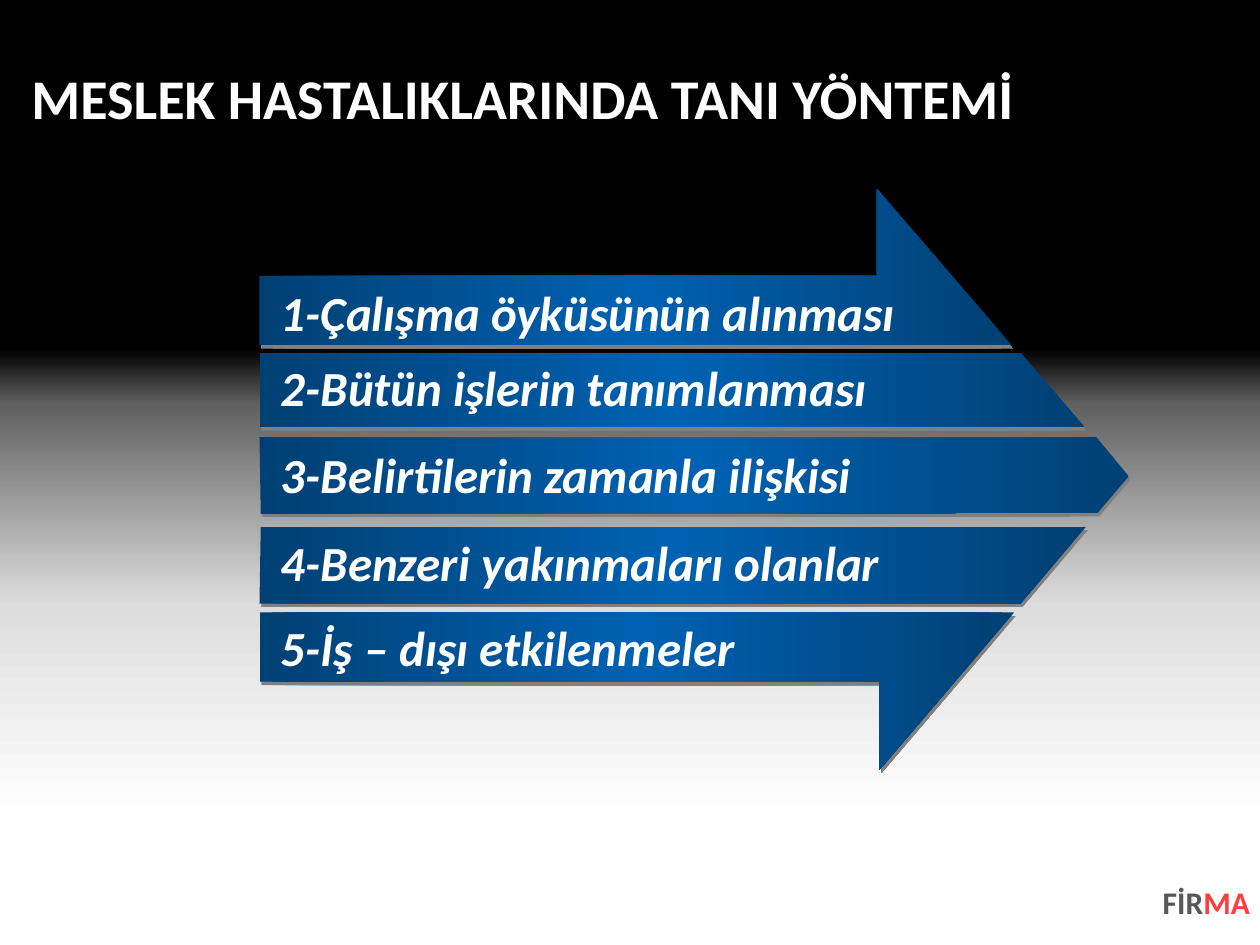
from lxml.etree import SubElement
from pptx import Presentation
from pptx.dml.color import RGBColor
from pptx.enum.shapes import MSO_SHAPE
from pptx.enum.text import MSO_ANCHOR, MSO_AUTO_SIZE, PP_ALIGN
from pptx.oxml.ns import qn
from pptx.util import Emu, Pt

PX = 9144  # 100 px to the inch
FONT = "Calibri"
HUES = {
    "black": "000000", "white": "FFFFFF", "dark": "5F5F5F", "light": "DDDDDD",
    "navy": "004074", "blue": "0061B2", "shade": "808080",
    "gray": "575757", "red": "FB3E3E",
}

# Label, label top, then outline, all relative to the arrow's box
STEPS = [
    ("1-Çalışma öyküsünün alınması", 74,
     [(597, 124), (490, 0), (490, 69), (0, 69), (0, 124)]),
    ("2-Bütün işlerin tanımlanması", 134,
     [(0, 189), (655, 189), (604, 130), (0, 130)]),
    ("3-Belirtilerin zamanla ilişkisi", 203,
     [(1, 258), (665, 257), (690, 228), (664, 197), (0, 197)]),
    ("4-Benzeri yakınmaları olanlar", 273,
     [(0, 329), (604, 329), (656, 268), (1, 268)]),
    ("5-İş – dışı etkilenmeler", 340,
     [(0, 391), (492, 391), (492, 461), (599, 336), (0, 336)]),
]


def px(*nums):
    return [Emu(n * PX) for n in nums]


def rgb(name):
    return RGBColor.from_string(HUES[name])


def blend(shape, names, angle):
    """Fill with evenly spaced colour stops; the angle runs clockwise."""
    shape.fill.gradient()
    grad = shape.fill._xPr.find(qn("a:gradFill"))
    for child in list(grad):
        grad.remove(child)
    stops = SubElement(grad, qn("a:gsLst"))
    for i, name in enumerate(names):
        pos = 100000 * i // (len(names) - 1)
        stop = SubElement(stops, qn("a:gs"), pos=str(pos))
        SubElement(stop, qn("a:srgbClr"), val=HUES[name])
    SubElement(grad, qn("a:lin"), ang=str(angle * 60000), scaled="0")


def shade(shape):
    """Cast a short hard shadow to the lower right."""
    shape.shadow.inherit = False
    effect = shape._element.spPr.find(qn("a:effectLst"))
    cast = SubElement(effect, qn("a:outerShdw"), blurRad="0",
                      dist=str(Pt(2.2)), dir=str(63 * 60000),
                      algn="ctr", rotWithShape="0")
    SubElement(cast, qn("a:srgbClr"), val=HUES["shade"])


def write(shapes, box, runs, size, pad=0):
    """Add a bold text box from (text, colour) runs; return frame and paragraph."""
    label = shapes.add_textbox(*px(*box))
    frame = label.text_frame
    frame.word_wrap = True
    frame.margin_left = frame.margin_right = 0
    frame.margin_top = frame.margin_bottom = Emu(pad * PX)
    para = frame.paragraphs[0]
    para.font.name, para.font.size, para.font.bold = FONT, Pt(size), True
    for text, hue in runs:
        run = para.add_run()
        run.text = text
        run.font.color.rgb = rgb(hue)
    return frame, para


def backdrop(slide, x, y, w):
    shapes = slide.shapes.add_group_shape().shapes
    bands = [
        (0, 288, ["black"]),
        (320, 161, ["dark", "light"]),
        (278, 43, ["black", "dark"]),
        (479, 171, ["light", "white"]),
    ]
    for top, high, names in bands:
        band = shapes.add_shape(MSO_SHAPE.RECTANGLE, *px(x, y + top, w, high))
        if len(names) > 1:
            blend(band, names, 90)
        else:
            band.fill.solid()
            band.fill.fore_color.rgb = rgb(names[0])
        band.line.fill.background()
        band.shadow.inherit = False


def arrow(slide, x, y):
    for _, _, points in STEPS:
        first, *rest = [(x + a, y + b) for a, b in points]
        pen = slide.shapes.build_freeform(*first, scale=PX)
        pen.add_line_segments(rest, close=True)
        slab = pen.convert_to_shape()
        blend(slab, ["navy", "blue", "navy"], 0)
        slab.line.fill.background()
        shade(slab)

    labels = slide.shapes.add_group_shape().shapes
    for text, top, _ in STEPS:
        frame, para = write(labels, (x + 17, y + top, 580, 47),
                            [(text, "white")], 28)
        frame.auto_size = MSO_AUTO_SIZE.SHAPE_TO_FIT_TEXT
        para.font.italic = True


def title(slide, box):
    frame, para = write(slide.shapes, box,
                        [("MESLEK HASTALIKLARINDA TANI YÖNTEMİ", "white")],
                        32, pad=5)
    frame.vertical_anchor = MSO_ANCHOR.MIDDLE
    para.line_spacing = 0.9


def mark(slide, box):
    _, para = write(slide.shapes, box, [("FİR", "gray"), ("MA", "red")], 18)
    para.alignment = PP_ALIGN.RIGHT


def main():
    deck = Presentation()
    deck.slide_width, deck.slide_height = px(1000, 750)
    slide = deck.slides.add_slide(deck.slide_layouts[6])
    backdrop(slide, 0, -1, 1000)
    arrow(slide, 206, 150)
    title(slide, (25, 45, 964, 71))
    mark(slide, (892, 701, 100, 49))
    deck.save("out.pptx")


if __name__ == "__main__":
    main()
